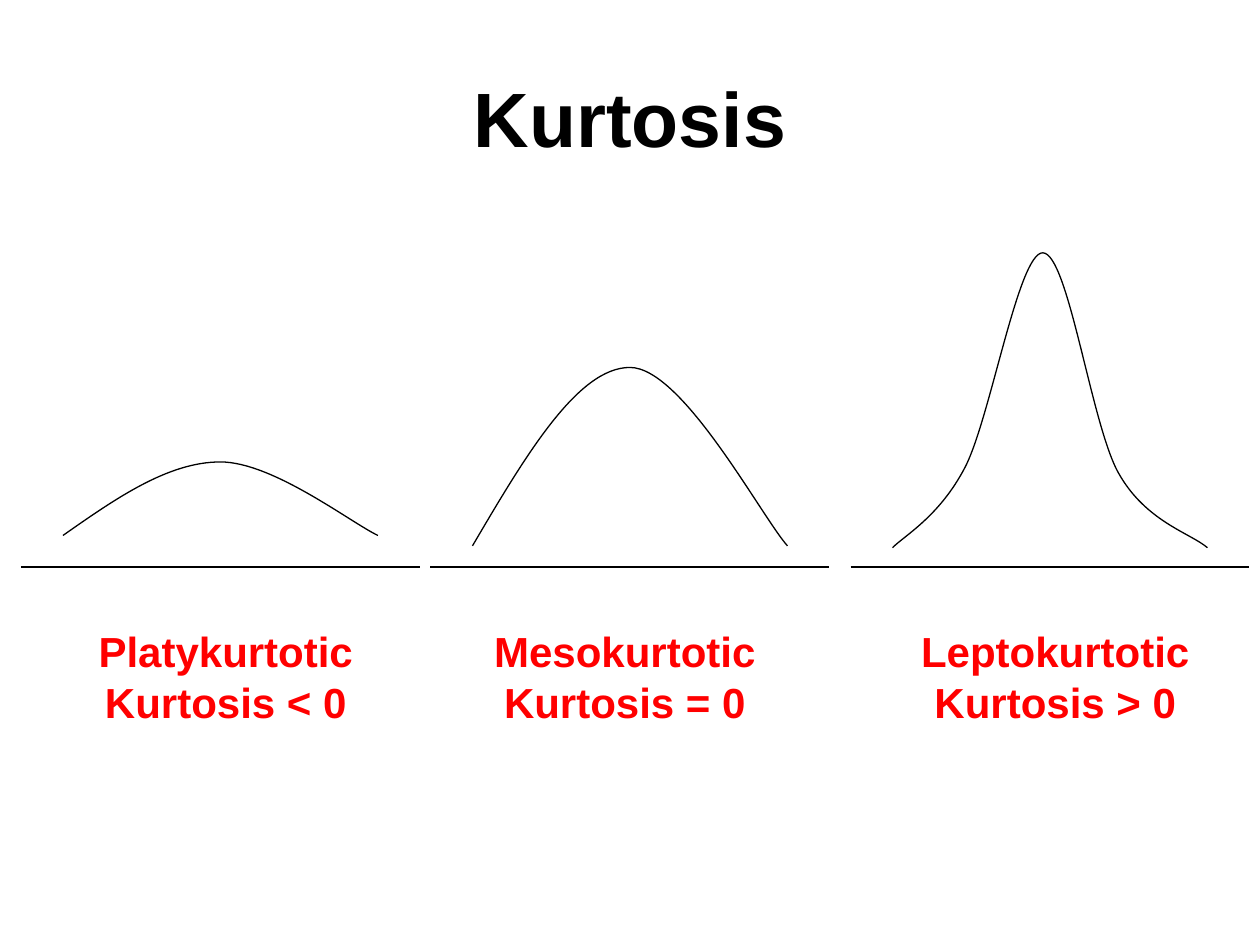
from dataclasses import dataclass

from lxml import etree
from pptx import Presentation
from pptx.dml.color import RGBColor
from pptx.enum.shapes import MSO_CONNECTOR
from pptx.enum.text import MSO_ANCHOR, MSO_AUTO_SIZE, PP_ALIGN
from pptx.oxml.ns import qn
from pptx.util import Pt

CENTER = PP_ALIGN.CENTER
MIDDLE = MSO_ANCHOR.MIDDLE
STRAIGHT = MSO_CONNECTOR.STRAIGHT
FIT_SHAPE = MSO_AUTO_SIZE.SHAPE_TO_FIT_TEXT

BLACK = RGBColor(0, 0, 0)
RED = RGBColor(255, 0, 0)
FONT = "Arial"

LINE_WIDTH = 0.75
AXIS_Y, AXIS_WIDTH = 324, 228
LABEL_Y, LABEL_WIDTH, LABEL_HEIGHT = 354, 198, 65


@dataclass
class Distribution:
    name: str
    relation: str
    axis_x: float
    label_x: float
    curve: list[tuple[float, float]]  # start, then three points per Bézier segment


DISTRIBUTIONS = [
    Distribution("Platykurtotic", "Kurtosis < 0", 12, 30,
                 [(36, 306), (66, 285), (96, 264), (126, 264),
                  (156, 264), (201, 299), (216, 306)]),
    Distribution("Mesokurtotic", "Kurtosis = 0", 246, 258,
                 [(270, 312), (300, 261), (330, 210), (360, 210),
                  (390, 210), (435, 295), (450, 312)]),
    Distribution("Leptokurtotic", "Kurtosis > 0", 486, 504,
                 [(510, 313), (517, 306), (537, 295), (551.5, 267),
                  (566, 239), (582, 144), (596, 144.5),
                  (610.5, 145), (623.5, 242), (639, 270),
                  (654.5, 298), (680, 304.5), (690, 313)]),
]


def style_line(shape) -> None:
    shape.line.color.rgb = BLACK
    shape.line.width = Pt(LINE_WIDTH)


def style_text(p, size: float, color: RGBColor) -> None:
    p.alignment = CENTER
    p.font.name = FONT
    p.font.size = Pt(size)
    p.font.bold = True
    p.font.color.rgb = color


def add_curve(s, points: list[tuple[float, float]]) -> None:
    start, *rest = [(Pt(x), Pt(y)) for x, y in points]
    builder = s.shapes.build_freeform(*start, scale=1.0)
    builder.add_line_segments(rest, close=False)
    shape = builder.convert_to_shape()
    shape.shadow.inherit = False
    shape.fill.background()
    style_line(shape)

    # Merge every three line steps into one cubic Bézier segment
    steps = list(shape._element.iter(qn("a:lnTo")))
    for i in range(0, len(steps), 3):
        bezier = etree.Element(qn("a:cubicBezTo"))
        steps[i].addprevious(bezier)
        for step in steps[i:i + 3]:
            bezier.append(step[0])
            step.getparent().remove(step)


def add_label(s, d: Distribution) -> None:
    box = s.shapes.add_textbox(Pt(d.label_x), Pt(LABEL_Y), Pt(LABEL_WIDTH), Pt(LABEL_HEIGHT))
    tf = box.text_frame
    tf.word_wrap = True
    tf.auto_size = FIT_SHAPE
    tf.text = f"{d.name}\n{d.relation}"
    for p in tf.paragraphs:
        style_text(p, 24, RED)


def add_axis(s, x: float) -> None:
    axis = s.shapes.add_connector(STRAIGHT, Pt(x), Pt(AXIS_Y), Pt(x + AXIS_WIDTH), Pt(AXIS_Y))
    style_line(axis)
    etree.SubElement(axis._element.spPr, qn("a:effectLst"))


def main() -> None:
    prs = Presentation()
    prs.slide_width, prs.slide_height = Pt(720), Pt(540)
    s = prs.slides.add_slide(prs.slide_layouts[5])

    # Title
    title = s.shapes.title
    title.left, title.top, title.width, title.height = Pt(36), Pt(21.6), Pt(648), Pt(90)
    title.text_frame.text = "Kurtosis"
    title.text_frame.vertical_anchor = MIDDLE
    style_text(title.text_frame.paragraphs[0], 44, BLACK)

    # Distributions, each with its curve, label and axis
    for d in DISTRIBUTIONS:
        add_curve(s, d.curve)
        add_label(s, d)
        add_axis(s, d.axis_x)

    prs.save("out.pptx")


if __name__ == "__main__":
    main()
